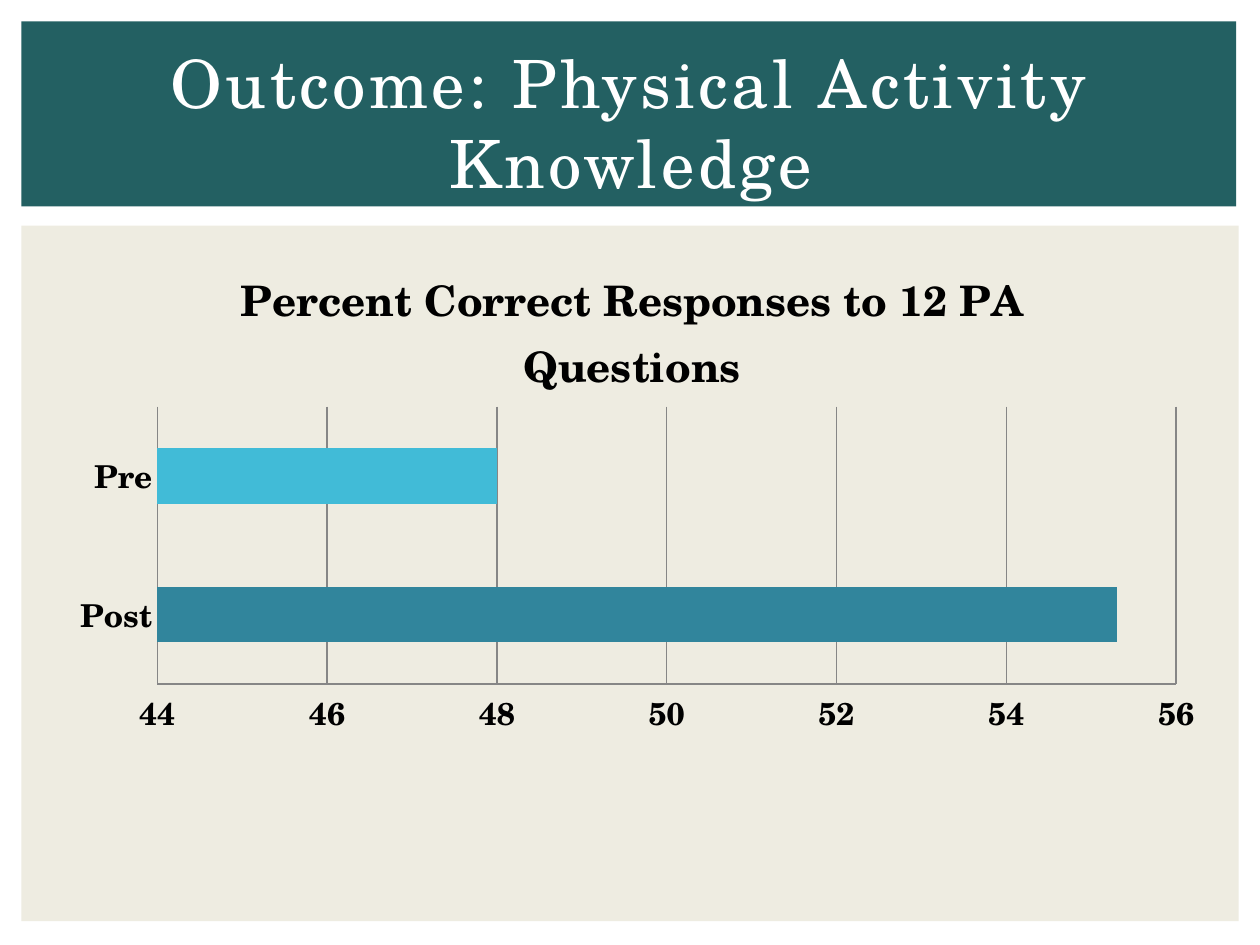
"""Build the slide on physical activity knowledge with its bar chart."""
from dataclasses import dataclass

from lxml.etree import SubElement
from pptx import Presentation
from pptx.chart.data import CategoryChartData
from pptx.dml.color import RGBColor
from pptx.enum.chart import XL_CHART_TYPE, XL_TICK_MARK
from pptx.enum.shapes import MSO_SHAPE
from pptx.enum.text import MSO_ANCHOR, PP_ALIGN
from pptx.oxml.ns import qn
from pptx.util import Cm, Pt


@dataclass(frozen=True)
class Theme:
    font: str = "TeX Gyre Schola"
    banner: str = "236062"
    panel: str = "EEECE1"
    heading: str = "FFFFFF"
    ink: str = "000000"
    rule: str = "868686"
    post: str = "31859C"
    pre: str = "41BBD7"
    heading_size: int = 38
    chart_title_size: int = 24
    axis_size: int = 18


def style_font(font, theme, size, color, bold=False):
    font.name = theme.font
    font.size = Pt(size)
    font.bold = bold
    font.color.rgb = RGBColor.from_string(color)


def write_text(frame, text, theme, size, color, bold=False, spacing=0):
    paragraph = frame.paragraphs[0]
    paragraph.alignment = PP_ALIGN.CENTER
    run = paragraph.add_run()
    run.text = text
    style_font(run.font, theme, size, color, bold)
    if spacing:
        run._r.get_or_add_rPr().set("spc", str(spacing * 100))


def place_plot(chart, **fractions):
    plot_area = chart._chartSpace.chart.plotArea
    layout = plot_area.find(qn("c:layout"))
    if layout is None:
        layout = SubElement(plot_area, qn("c:layout"))
        plot_area.insert(0, layout)
    manual = SubElement(layout, qn("c:manualLayout"))
    settings = {"layoutTarget": "inner", "xMode": "edge", "yMode": "edge", **fractions}
    for tag, value in settings.items():
        SubElement(manual, qn(f"c:{tag}")).set("val", str(value))


class SlideBuilder:
    def __init__(self, slide, theme):
        self.slide = slide
        self.theme = theme

    def block(self, left, top, width, height, color):
        area = self.slide.shapes.add_shape(
            MSO_SHAPE.RECTANGLE, Cm(left), Cm(top), Cm(width), Cm(height))
        area.shadow.inherit = False
        area.fill.solid()
        area.fill.fore_color.rgb = RGBColor.from_string(color)
        area.line.fill.background()

    def heading(self, left, top, width, height, text):
        frame = self.slide.shapes.add_textbox(
            Cm(left), Cm(top), Cm(width), Cm(height)).text_frame
        frame.word_wrap = True
        frame.vertical_anchor = MSO_ANCHOR.MIDDLE
        write_text(frame, text, self.theme, size=self.theme.heading_size,
                   color=self.theme.heading, spacing=2)

    def bar_chart(self, left, top, width, height, title, scores, colors):
        theme = self.theme
        data = CategoryChartData()
        data.categories = list(scores)
        data.add_series("Series 1", list(scores.values()))
        chart = self.slide.shapes.add_chart(
            XL_CHART_TYPE.BAR_CLUSTERED, Cm(left), Cm(top), Cm(width), Cm(height), data).chart
        chart.has_legend = False
        chart.has_title = True
        write_text(chart.chart_title.text_frame, title, theme,
                   size=theme.chart_title_size, color=theme.ink, bold=True)
        chart.chart_title.include_in_layout = False
        place_plot(chart, x=0.09, y=0.33, w=0.88, h=0.54)

        bars = chart.plots[0]
        bars.gap_width = 150
        bars.vary_by_categories = False
        for index, color in enumerate(colors):
            fill = bars.series[0].points[index].format.fill
            fill.solid()
            fill.fore_color.rgb = RGBColor.from_string(color)

        percent = chart.value_axis
        percent.minimum_scale, percent.maximum_scale, percent.major_unit = 44, 56, 2
        percent.has_major_gridlines = True
        percent.tick_labels.number_format = "General"
        percent.tick_labels.number_format_is_linked = False
        for axis in (chart.category_axis, percent):
            axis.major_tick_mark = axis.minor_tick_mark = XL_TICK_MARK.NONE
            style_font(axis.tick_labels.font, theme, theme.axis_size, theme.ink, bold=True)
        for ruled in (chart.category_axis, percent, percent.major_gridlines):
            ruled.format.line.color.rgb = RGBColor.from_string(theme.rule)
            ruled.format.line.width = Pt(0.75)


def main():
    deck = Presentation()
    deck.slide_width, deck.slide_height = Cm(25.4), Cm(19.05)
    theme = Theme()
    builder = SlideBuilder(deck.slides.add_slide(deck.slide_layouts[6]), theme)
    builder.block(0.43, 4.55, 24.54, 14.02, theme.panel)
    builder.block(0.43, 0.43, 24.49, 3.73, theme.banner)
    builder.heading(1.07, 0.99, 23.29, 2.92, "Outcome: Physical Activity Knowledge")
    builder.bar_chart(1.07, 4.78, 23.34, 10.36,
                      "Percent Correct Responses to 12 PA Questions",
                      scores={"Post": 55.3, "Pre": 48}, colors=(theme.post, theme.pre))
    deck.save("out.pptx")


if __name__ == "__main__":
    main()
